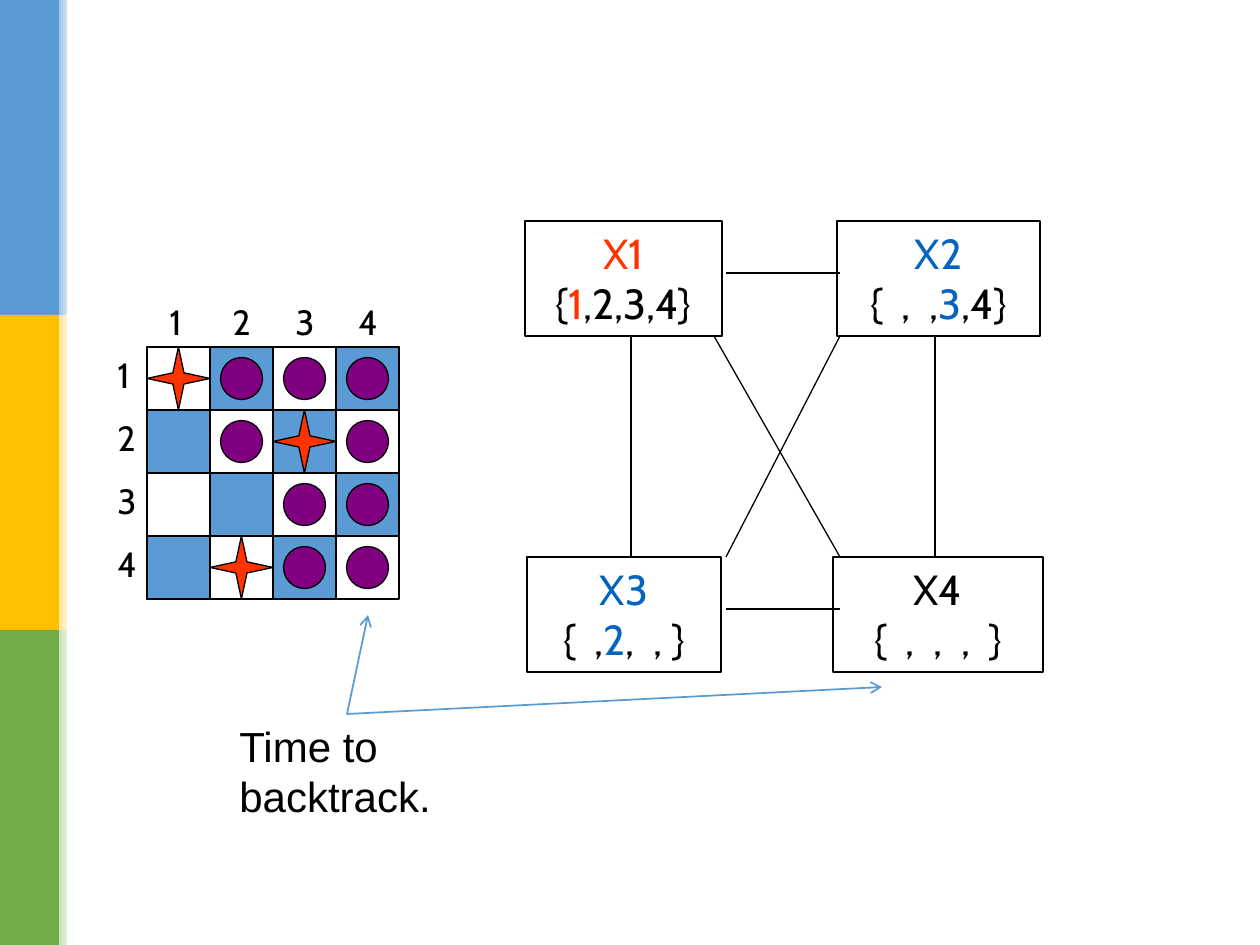
"""Build a slide showing a backtracking step in the four queens problem."""
from lxml import etree
from pptx import Presentation
from pptx import util as u
from pptx.dml.color import RGBColor
from pptx.enum import shapes, text
from pptx.oxml.ns import qn

PX = 9144000 / 1260
BLACK, WHITE, RED, BLUE = "000000", "FFFFFF", "FF3300", "0563C1"
SKY, PURPLE = "5B9BD5", "800080"
BANDS = [(SKY, "9DC3E6"), ("FFC000", "FFE699"), ("70AD47", "C5E0B4")]
BOARD = ["Qxxx", ".xQx", "..xx", ".Qxx"]
BOARD_LEFT, BOARD_TOP, CELL, DISC = 147, 347, 63, 42
VARIABLES = [
    ((525, 221, 197, 115), [[("X1", RED)], [("{", BLACK), ("1", RED), (",2,3,4}", BLACK)]]),
    ((837, 221, 203, 115), [[("X2", BLUE)], [("{  ,  ,", BLACK), ("3", BLUE), (",4}", BLACK)]]),
    ((527, 557, 194, 115), [[("X3", BLUE)], [("{  ,", BLACK), ("2", BLUE), (",  , }", BLACK)]]),
    ((833, 557, 210, 115), [[("X4", BLACK)], [("{  ,  ,  ,  }", BLACK)]]),
]
CONSTRAINTS = [
    (726, 273, 840, 273), (631, 336, 631, 557), (726, 609, 840, 609),
    (935, 336, 935, 557), (714, 336, 840, 557), (840, 336, 726, 557),
]
ARROWS = [(347, 714, 368, 615), (347, 714, 882, 687)]


def px(*lengths):
    return [u.Emu(round(length * PX)) for length in lengths]


def colour(value):
    return RGBColor.from_string(value)


def add_shape(slide, kind, place, fill=None, line=None):
    shape = slide.shapes.add_shape(kind, *px(*place))
    shape.shadow.inherit = False
    if fill:
        shape.fill.solid()
        shape.fill.fore_color.rgb = colour(fill)
    else:
        shape.fill.background()
    if line:
        shape.line.color.rgb = colour(line)
        shape.line.width = u.Pt(0.75)
    else:
        shape.line.fill.background()
    return shape


def add_line(slide, ends, line=BLACK, width=0.75, arrow=False):
    connector = slide.shapes.add_connector(shapes.MSO_CONNECTOR.STRAIGHT, *px(*ends))
    connector.line.color.rgb = colour(line)
    connector.line.width = u.Pt(width)
    if arrow:
        etree.SubElement(connector.line._get_or_add_ln(), qn("a:tailEnd"), type="arrow")
    etree.SubElement(connector._element.spPr, qn("a:effectLst"))


def write(shape, lines, size=24, font="Cabin", align=text.PP_ALIGN.LEFT, wrap=False):
    frame = shape.text_frame
    frame.word_wrap = wrap
    frame.auto_size = text.MSO_AUTO_SIZE.NONE if wrap else text.MSO_AUTO_SIZE.SHAPE_TO_FIT_TEXT
    frame.vertical_anchor = text.MSO_ANCHOR.TOP
    for index, runs in enumerate(lines):
        paragraph = frame.add_paragraph() if index else frame.paragraphs[0]
        paragraph.alignment = align
        for words, tint in runs:
            run = paragraph.add_run()
            run.text = words
            run.font.size = u.Pt(size)
            run.font.name = font
            run.font.color.rgb = colour(tint)


def add_text(slide, place, words, **style):
    write(slide.shapes.add_textbox(*px(*place)), [[(words, BLACK)]], **style)


def draw_side_bar(slide):
    for index, (strong, pale) in enumerate(BANDS):
        top = 315 * index
        add_shape(slide, shapes.MSO_SHAPE.RECTANGLE, (0, top, 59, 315), strong)
        fade = add_shape(slide, shapes.MSO_SHAPE.RECTANGLE, (59, top, 15, 315))
        fade.fill.gradient()
        fade.fill.gradient_angle = 0
        for stop, tint in zip(fade.fill.gradient_stops, (pale, WHITE)):
            stop.color.rgb = colour(tint)
    add_shape(slide, shapes.MSO_SHAPE.RECTANGLE, (67, 0, 5, 945), WHITE)


def draw_board(slide):
    side = CELL * len(BOARD)
    add_shape(slide, shapes.MSO_SHAPE.RECTANGLE, (BOARD_LEFT, BOARD_TOP, side, side), line=BLACK)
    inset = (CELL - DISC) / 2
    for row, marks in enumerate(BOARD):
        offset = CELL * row
        add_text(slide, (BOARD_LEFT - 42, BOARD_TOP + offset, 44, 55), str(row + 1), size=20)
        add_text(slide, (BOARD_LEFT + 10 + offset, BOARD_TOP - 53, 44, 55), str(row + 1), size=20)
        for column, mark in enumerate(marks):
            left, top = BOARD_LEFT + CELL * column, BOARD_TOP + offset
            square = (left, top, CELL, CELL)
            if (row + column) % 2:
                add_shape(slide, shapes.MSO_SHAPE.RECTANGLE, square, SKY, BLACK)
            if mark == "Q":
                star = add_shape(slide, shapes.MSO_SHAPE.STAR_4_POINT, square, RED, BLACK)
                star.adjustments[0] = 0.125
            elif mark == "x":
                disc = (left + inset, top + inset, DISC, DISC)
                add_shape(slide, shapes.MSO_SHAPE.OVAL, disc, PURPLE, BLACK)


def draw_graph(slide):
    for place, lines in VARIABLES:
        box = add_shape(slide, shapes.MSO_SHAPE.RECTANGLE, place, line=BLACK)
        write(box, lines, align=text.PP_ALIGN.CENTER)
    for ends in CONSTRAINTS:
        add_line(slide, ends)


def main():
    presentation = Presentation()
    presentation.slide_width, presentation.slide_height = px(1260, 945)
    slide = presentation.slides.add_slide(presentation.slide_layouts[6])
    draw_side_bar(slide)
    draw_board(slide)
    draw_graph(slide)
    add_text(slide, (227, 714, 241, 113), "Time to backtrack.", font="Arial", wrap=True)
    for ends in ARROWS:
        add_line(slide, ends, line=SKY, width=1, arrow=True)
    presentation.save("out.pptx")


if __name__ == "__main__":
    main()
